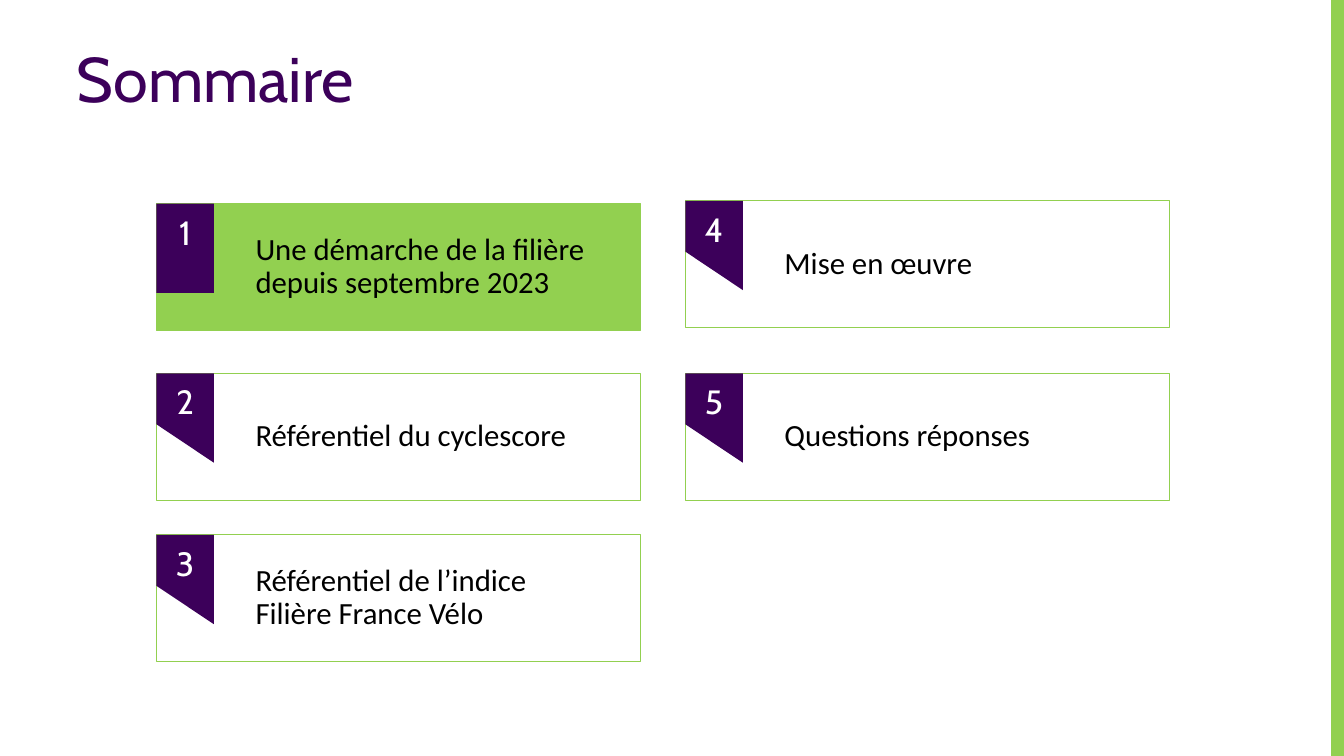
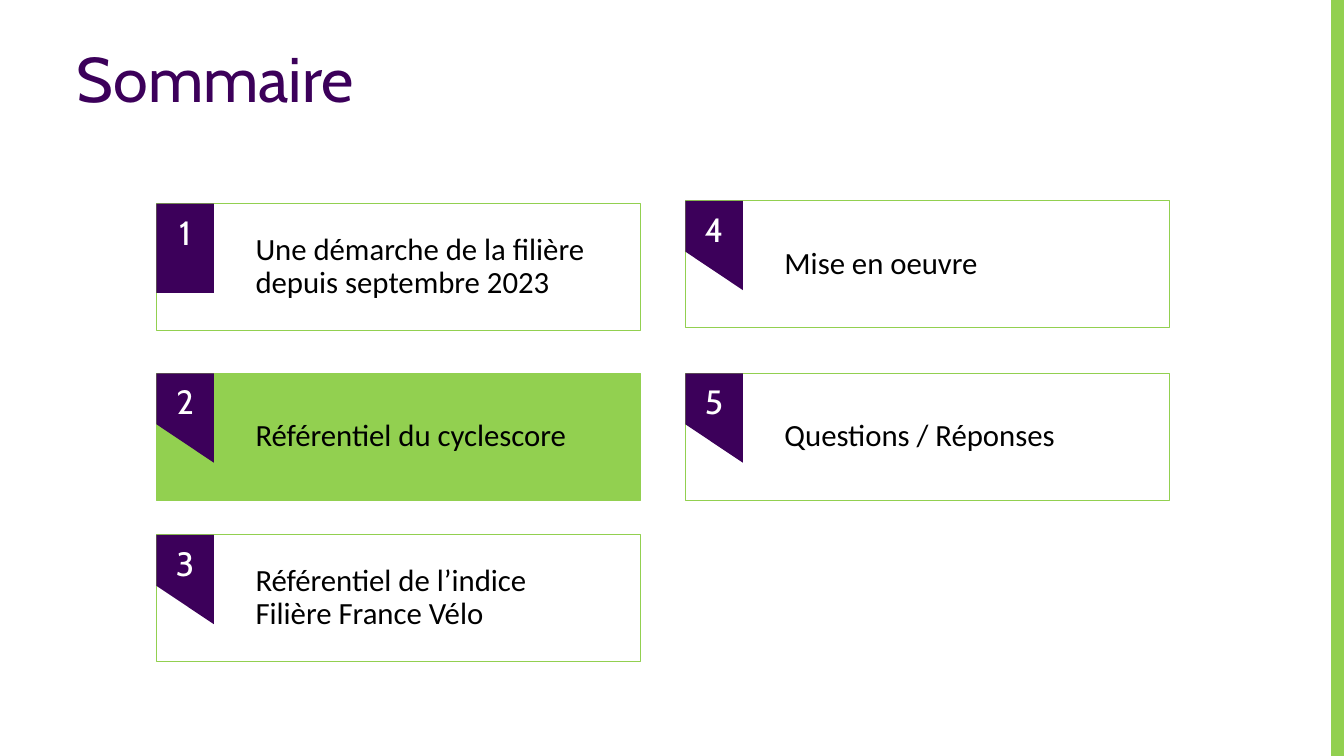
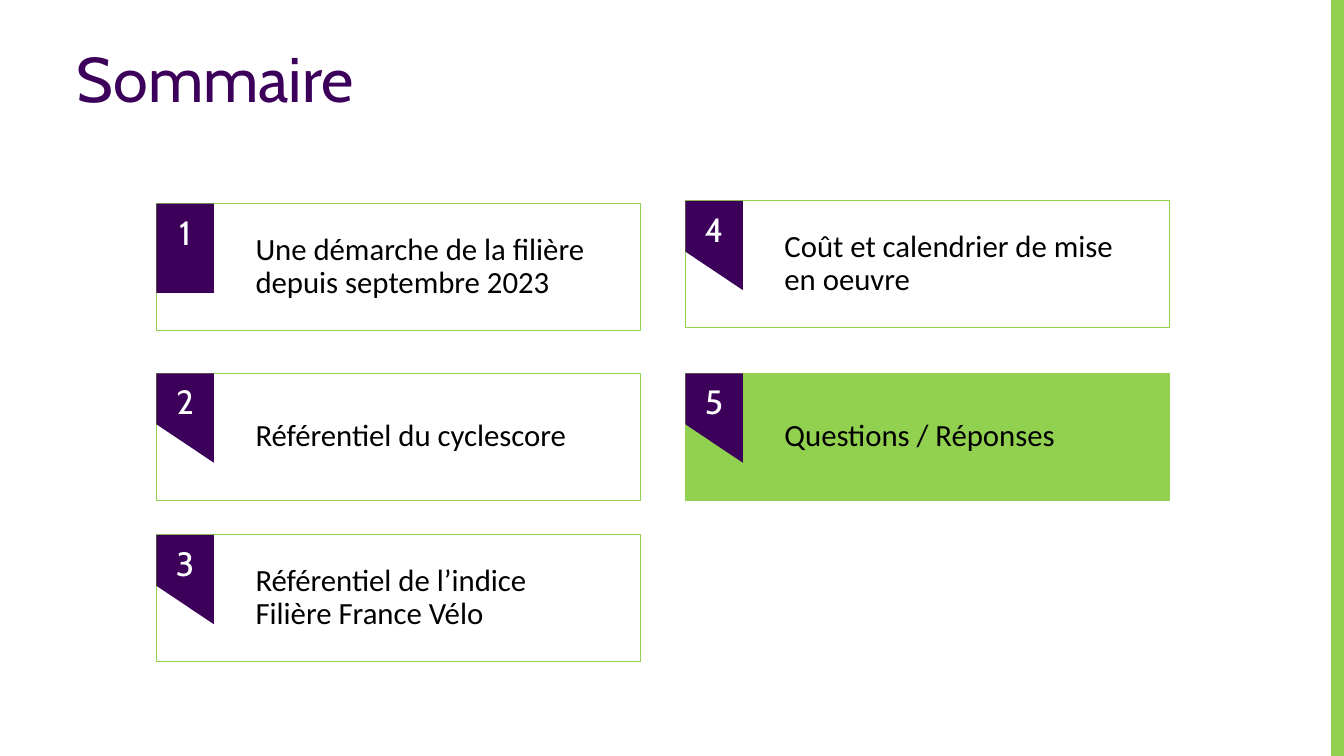
from pptx import Presentation
from pptx.dml import color as dml
from pptx.enum import shapes, text
from pptx.util import Cm, Pt

GREEN, PURPLE, WHITE, BLACK = "92D050", "3C005A", "FFFFFF", "000000"
TITLE_FONT, BODY_FONT = "Cabin", "Calibri"
SLIDE_WIDTH, SLIDE_HEIGHT = 33.87, 19.05
BOX_WIDTH, BOX_HEIGHT = 12.2, 3.2
BADGE_WIDTH, BADGE_HEIGHT, BADGE_SHOULDER = 1.45, 2.25, 1.28
LEFT, RIGHT = 3.94, 17.27
POSITIONS = [(LEFT, 5.13), (LEFT, 9.41), (LEFT, 13.48), (RIGHT, 5.06), (RIGHT, 9.41)]

TITLE = "Sommaire"
SHARED_TOPICS = [
    "Une démarche de la filière depuis septembre 2023",
    "Référentiel du cyclescore",
    "Référentiel de l’indice Filière France Vélo",
]
AGENDAS = [
    {"current": 1, "topics": ["Mise en œuvre", "Questions réponses"]},
    {"current": 2, "topics": ["Mise en oeuvre", "Questions / Réponses"]},
    {"current": 5, "topics": ["Coût et calendrier de mise en oeuvre", "Questions / Réponses"]},
]


def rgb(value):
    return dml.RGBColor.from_string(value)


def paint(shape, fill, line=None, width=0.75):
    shape.shadow.inherit = False
    shape.fill.solid()
    shape.fill.fore_color.rgb = rgb(fill)
    if line:
        shape.line.color.rgb = rgb(line)
        shape.line.width = Pt(width)
    else:
        shape.line.fill.background()


def write(shape, content, *, font, size, color, insets=(0, 0, 0, 0), spacing=1.0, gap=0,
          align=text.PP_ALIGN.LEFT, anchor=text.MSO_ANCHOR.TOP):
    frame = shape.text_frame
    frame.word_wrap = True
    frame.vertical_anchor = anchor
    frame.margin_left, frame.margin_top, frame.margin_right, frame.margin_bottom = map(Cm, insets)
    paragraph = frame.paragraphs[0]
    paragraph.text = content
    paragraph.alignment = align
    paragraph.line_spacing = spacing
    if gap:
        paragraph.space_after = Pt(gap)
    paragraph.font.name = font
    paragraph.font.size = Pt(size)
    paragraph.font.color.rgb = rgb(color)


def add_rectangle(slide, left, top, width, height):
    return slide.shapes.add_shape(
        shapes.MSO_SHAPE.RECTANGLE, Cm(left), Cm(top), Cm(width), Cm(height))


def add_badge(slide, number, left, top):
    if number == 1:
        badge = add_rectangle(slide, left, top, BADGE_WIDTH, BADGE_HEIGHT)
    else:
        right = left + BADGE_WIDTH
        outline = [(right, top), (right, top + BADGE_HEIGHT), (left, top + BADGE_SHOULDER)]
        builder = slide.shapes.build_freeform(Cm(left), Cm(top))
        builder.add_line_segments([(Cm(x), Cm(y)) for x, y in outline], close=True)
        badge = builder.convert_to_shape()
    paint(badge, PURPLE)
    write(badge, str(number), font=TITLE_FONT, size=24, color=WHITE,
          insets=(0, 0.2, 0, 0), align=text.PP_ALIGN.CENTER)


def add_topic(slide, number, topic, position, is_current):
    left, top = position
    box = add_rectangle(slide, left, top, BOX_WIDTH, BOX_HEIGHT)
    paint(box, GREEN if is_current else WHITE, GREEN)
    write(box, topic, font=BODY_FONT, size=22, color=BLACK, insets=(2.5, 0.25, 1, 0.25),
          spacing=0.9, gap=1, anchor=text.MSO_ANCHOR.MIDDLE)
    add_badge(slide, number, left, top)


def add_frame(slide):
    band = add_rectangle(slide, 33.57, 0, 0.3, SLIDE_HEIGHT)
    paint(band, GREEN, GREEN, 1)
    title = slide.shapes.add_textbox(Cm(1.93), Cm(1.22), Cm(30), Cm(1.8))
    write(title, TITLE, font=TITLE_FONT, size=45, color=PURPLE, spacing=0.9)


def main():
    presentation = Presentation()
    presentation.slide_width, presentation.slide_height = Cm(SLIDE_WIDTH), Cm(SLIDE_HEIGHT)
    for agenda in AGENDAS:
        slide = presentation.slides.add_slide(presentation.slide_layouts[6])
        add_frame(slide)
        topics = SHARED_TOPICS + agenda["topics"]
        for number, (topic, position) in enumerate(zip(topics, POSITIONS), start=1):
            add_topic(slide, number, topic, position, number == agenda["current"])
    presentation.save("out.pptx")


if __name__ == "__main__":
    main()
